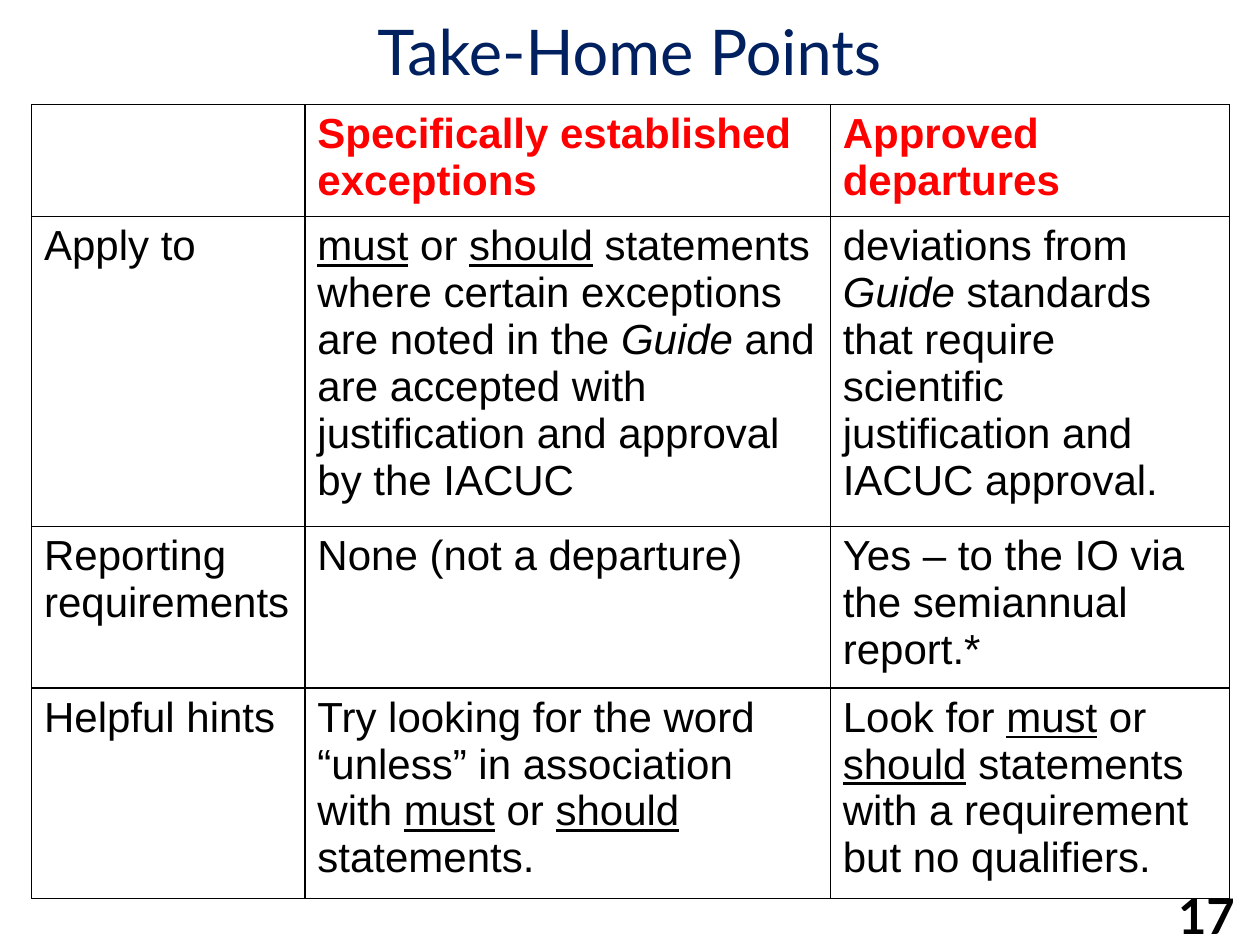
from lxml import etree
from pptx import Presentation
from pptx.dml.color import RGBColor
from pptx.enum.text import MSO_ANCHOR, PP_ALIGN
from pptx.oxml.ns import qn
from pptx.util import Inches, Pt

BOTTOM, MIDDLE = MSO_ANCHOR.BOTTOM, MSO_ANCHOR.MIDDLE
CENTER = PP_ALIGN.CENTER

NAVY = RGBColor(0x00, 0x20, 0x60)
RED = RGBColor(0xFF, 0x00, 0x00)
BLACK = RGBColor(0x00, 0x00, 0x00)

TITLE_ONLY = 5
COLUMN_WIDTHS = [2.17, 4.17, 3.17]
ROW_HEIGHTS = [0.89, 2.46, 1.28, 1.67]

PLAIN, UNDERLINE, ITALIC = "plain", "underline", "italic"
MUST = ("must", UNDERLINE)
OR = (" or ", PLAIN)
SHOULD = ("should", UNDERLINE)

ROWS = [
    [
        [],
        [("Specifically established exceptions", PLAIN)],
        [("Approved departures", PLAIN)],
    ],
    [
        [("Apply to", PLAIN)],
        [MUST, OR, SHOULD,
         (" statements where certain exceptions are noted in the ", PLAIN),
         ("Guide", ITALIC),
         (" and are accepted with justification and approval by the IACUC", PLAIN)],
        [("deviations from ", PLAIN), ("Guide ", ITALIC),
         ("standards that require scientific justification and IACUC approval.", PLAIN)],
    ],
    [
        [("Reporting requirements", PLAIN)],
        [("None (not a departure)", PLAIN)],
        [("Yes – to the IO via the semiannual report.*", PLAIN)],
    ],
    [
        [("Helpful hints", PLAIN)],
        [("Try looking for the word “unless” in association with ", PLAIN),
         MUST, OR, SHOULD, (" statements.", PLAIN)],
        [("Look for ", PLAIN), MUST, OR, SHOULD,
         (" statements with a requirement but no qualifiers.", PLAIN)],
    ],
]


def add_span(para, text, font, size, color, bold=False, style=PLAIN):
    span = para.add_run()
    span.text = text
    span.font.name = font
    span.font.size = Pt(size)
    span.font.color.rgb = color
    span.font.bold = bold
    span.font.underline = style == UNDERLINE
    span.font.italic = style == ITALIC


def add_title(page, text):
    title = page.shapes.title
    title.left, title.top = Inches(0.33), Inches(-0.08)
    title.width, title.height = Inches(9.33), Inches(0.83)
    title.text_frame.vertical_anchor = BOTTOM
    para = title.text_frame.paragraphs[0]
    para.alignment = CENTER
    add_span(para, text, "Lato", 36, NAVY)


def set_borders(cell):
    """Draw a one-point black line on all four sides of the cell."""
    properties = cell._tc.get_or_add_tcPr()
    for position, side in enumerate(("lnL", "lnR", "lnT", "lnB")):
        line = etree.Element(qn(f"a:{side}"), w=str(Pt(1)))
        fill = etree.SubElement(line, qn("a:solidFill"))
        etree.SubElement(fill, qn("a:srgbClr"), val=str(BLACK))
        properties.insert(position, line)


def add_comparison_table(page):
    table = page.shapes.add_table(
        len(ROW_HEIGHTS), len(COLUMN_WIDTHS), Inches(0.25), Inches(0.83),
        Inches(sum(COLUMN_WIDTHS)), Inches(sum(ROW_HEIGHTS))).table
    table.horz_banding = False
    for column, width in zip(table.columns, COLUMN_WIDTHS):
        column.width = Inches(width)
    for row, height in zip(table.rows, ROW_HEIGHTS):
        row.height = Inches(height)
    for row_index, row in enumerate(ROWS):
        is_header = row_index == 0
        for column_index, spans in enumerate(row):
            cell = table.cell(row_index, column_index)
            cell.fill.background()
            set_borders(cell)
            para = cell.text_frame.paragraphs[0]
            for text, style in spans:
                add_span(para, text, "Arial", 24, RED if is_header else BLACK,
                         bold=is_header, style=style)


def add_page_number(page, number):
    box = page.shapes.add_textbox(Inches(9.17), Inches(7.02), Inches(0.81), Inches(0.48))
    frame = box.text_frame
    frame.word_wrap = True
    frame.vertical_anchor = MIDDLE
    frame.margin_left = frame.margin_right = Inches(0.05)
    frame.margin_top = frame.margin_bottom = Inches(0.05)
    para = frame.paragraphs[0]
    para.alignment = CENTER
    add_span(para, number, "Lato", 28, BLACK, bold=True)


def main():
    deck = Presentation()
    deck.slide_width, deck.slide_height = Inches(10), Inches(7.5)
    page = deck.slides.add_slide(deck.slide_layouts[TITLE_ONLY])
    add_title(page, "Take-Home Points")
    add_comparison_table(page)
    add_page_number(page, "17")
    deck.save("out.pptx")


if __name__ == "__main__":
    main()
